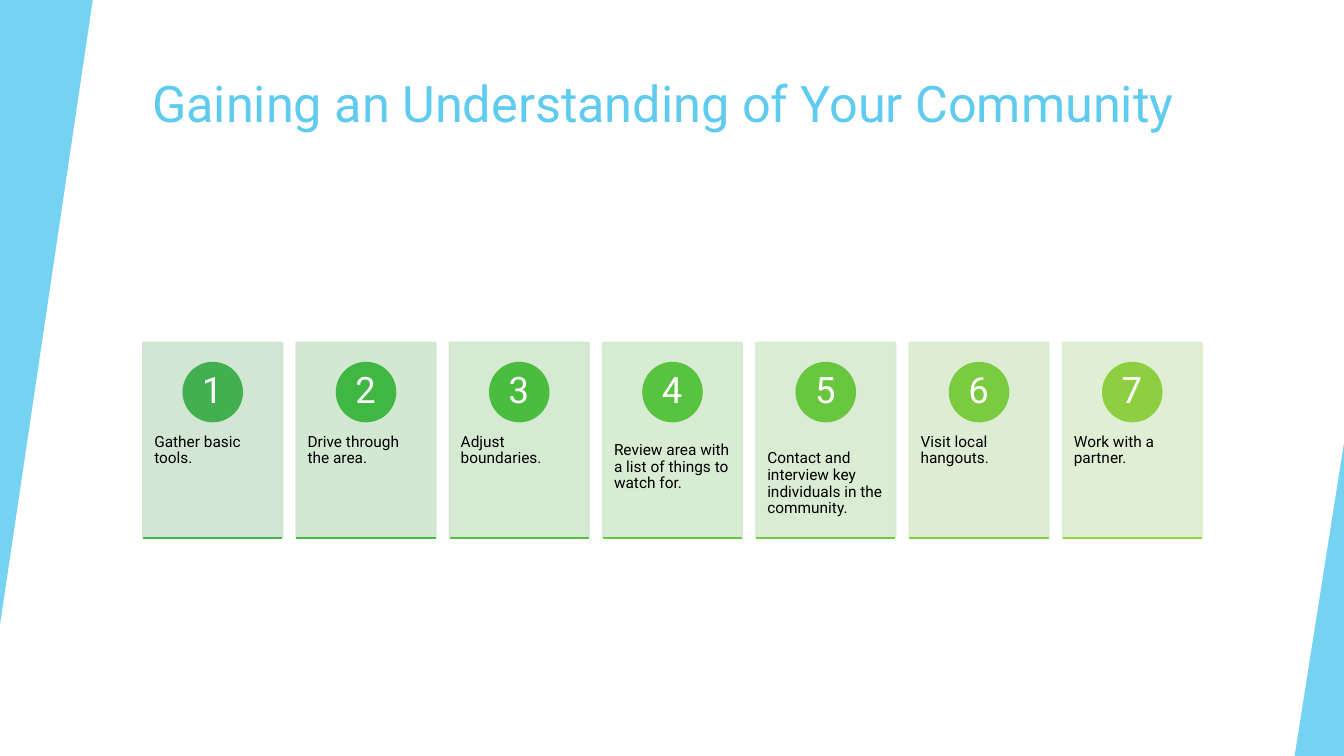
from lxml import etree
from pptx import Presentation
from pptx.dml.color import RGBColor
from pptx.enum.shapes import MSO_CONNECTOR, MSO_SHAPE
from pptx.enum.text import MSO_ANCHOR, PP_ALIGN
from pptx.oxml.ns import qn
from pptx.util import Inches, Pt

RECT = MSO_SHAPE.RECTANGLE
OVAL = MSO_SHAPE.OVAL
TRIANGLE = MSO_SHAPE.ISOSCELES_TRIANGLE
STRAIGHT = MSO_CONNECTOR.STRAIGHT
TOP, MIDDLE = MSO_ANCHOR.TOP, MSO_ANCHOR.MIDDLE
LEFT, CENTER = PP_ALIGN.LEFT, PP_ALIGN.CENTER

FONT = "Roboto"
COLORS = {"sky": "5FCBEF", "black": "000000", "white": "FFFFFF"}
CARD_LEFT, CARD_TOP, CARD_STEP = 1.42, 3.4, 1.52
CARD_W, CARD_H = 1.38, 1.93
STEPS = [
    ("Gather basic tools.", "CFE4D0", "42B051", "41B34A"),
    ("Drive through the area.", "CFE6CF", "40B743", "43BA40"),
    ("Adjust boundaries.", "D1E7CF", "4ABD3F", "50C13E"),
    ("Review area with a list of things to watch for.", "D4E9CF", "58C33E", "61C53E"),
    ("Contact and interview key individuals in the community.", "D6EBCF", "69C73F", "72C93F"),
    ("Visit local hangouts.", "DAECCF", "7ACB3F", "83CD40"),
    ("Work with a partner.", "DDEECF", "8DCF40", "96D141"),
]


def set_alpha(fill_format_parent, percent):
    """Make every solid colour below an element partly transparent."""
    for clr in fill_format_parent.iter(qn("a:srgbClr")):
        etree.SubElement(clr, qn("a:alpha")).set("val", str(percent * 1000))


def add_box(slide, kind, left, top, width, height, color, alpha=100, outlined=True):
    """Add a filled preset shape, outlined in its own colour if asked."""
    sp = slide.shapes.add_shape(kind, Inches(left), Inches(top), Inches(width), Inches(height))
    sp.shadow.inherit = False
    sp.fill.solid()
    sp.fill.fore_color.rgb = RGBColor.from_string(color)
    if outlined:
        sp.line.color.rgb = RGBColor.from_string(color)
        sp.line.width = Pt(1.5)
    else:
        sp.line.fill.background()
    if alpha < 100:
        set_alpha(sp.element.spPr, alpha)
    return sp


def add_text(slide, text, left, top, width, height, size, color,
             inset=(0.1, 0.05), align=LEFT, anchor=TOP, spacing=1.0):
    """Add a wrapped one-paragraph text box."""
    sp = slide.shapes.add_textbox(Inches(left), Inches(top), Inches(width), Inches(height))
    tf = sp.text_frame
    tf.word_wrap = True
    tf.vertical_anchor = anchor
    tf.margin_left = tf.margin_right = Inches(inset[0])
    tf.margin_top = tf.margin_bottom = Inches(inset[1])
    p = tf.paragraphs[0]
    p.text = text
    p.alignment = align
    p.line_spacing = spacing
    font = p.runs[0].font
    font.name = FONT
    font.size = Pt(size)
    font.color.rgb = RGBColor.from_string(color)


def add_rule(slide, left, top, width, color):
    """Add a horizontal line."""
    line = slide.shapes.add_connector(
        STRAIGHT, Inches(left), Inches(top), Inches(left + width), Inches(top))
    line.line.color.rgb = RGBColor.from_string(color)
    line.line.width = Pt(1.5)
    etree.SubElement(line.element.spPr, qn("a:effectLst"))


def add_edge(slide, left, top, width, height, rotation=0):
    """Add a right-angled triangle at the slide's edge."""
    sp = add_box(slide, TRIANGLE, left, top, width, height, COLORS["sky"], 85, outlined=False)
    sp.adjustments[0] = 1
    sp.rotation = rotation


def add_step(slide, index, text, card, badge, rule):
    """Add one numbered card."""
    left = CARD_LEFT + index * CARD_STEP
    add_box(slide, RECT, left, CARD_TOP, CARD_W, CARD_H, card, 90)
    add_text(slide, text, left, 4.14, CARD_W, 1.16, 11, COLORS["black"],
             inset=(0.11, 0.36), spacing=0.9)
    add_box(slide, OVAL, left + 0.4, 3.6, 0.58, 0.58, badge)
    add_text(slide, str(index + 1), left + 0.48, 3.68, 0.41, 0.41, 26, COLORS["white"],
             inset=(0.05, 0.01), align=CENTER, anchor=MIDDLE, spacing=0.9)
    add_rule(slide, left, 5.34, CARD_W, rule)


def main():
    """Build the slide and save it."""
    prs = Presentation()
    prs.slide_width, prs.slide_height = Inches(13.33), Inches(7.5)
    slide = prs.slides.add_slide(prs.slide_layouts[6])
    add_text(slide, "Gaining an Understanding of Your Community",
             1.41, 0.67, 11.15, 1.2, 36, COLORS["sky"])
    add_edge(slide, 0, 0, 0.92, 6.2, rotation=180)
    add_edge(slide, 12.84, 4.39, 0.49, 3.11)
    for index, step in enumerate(STEPS):
        add_step(slide, index, *step)
    prs.save("out.pptx")


if __name__ == "__main__":
    main()
